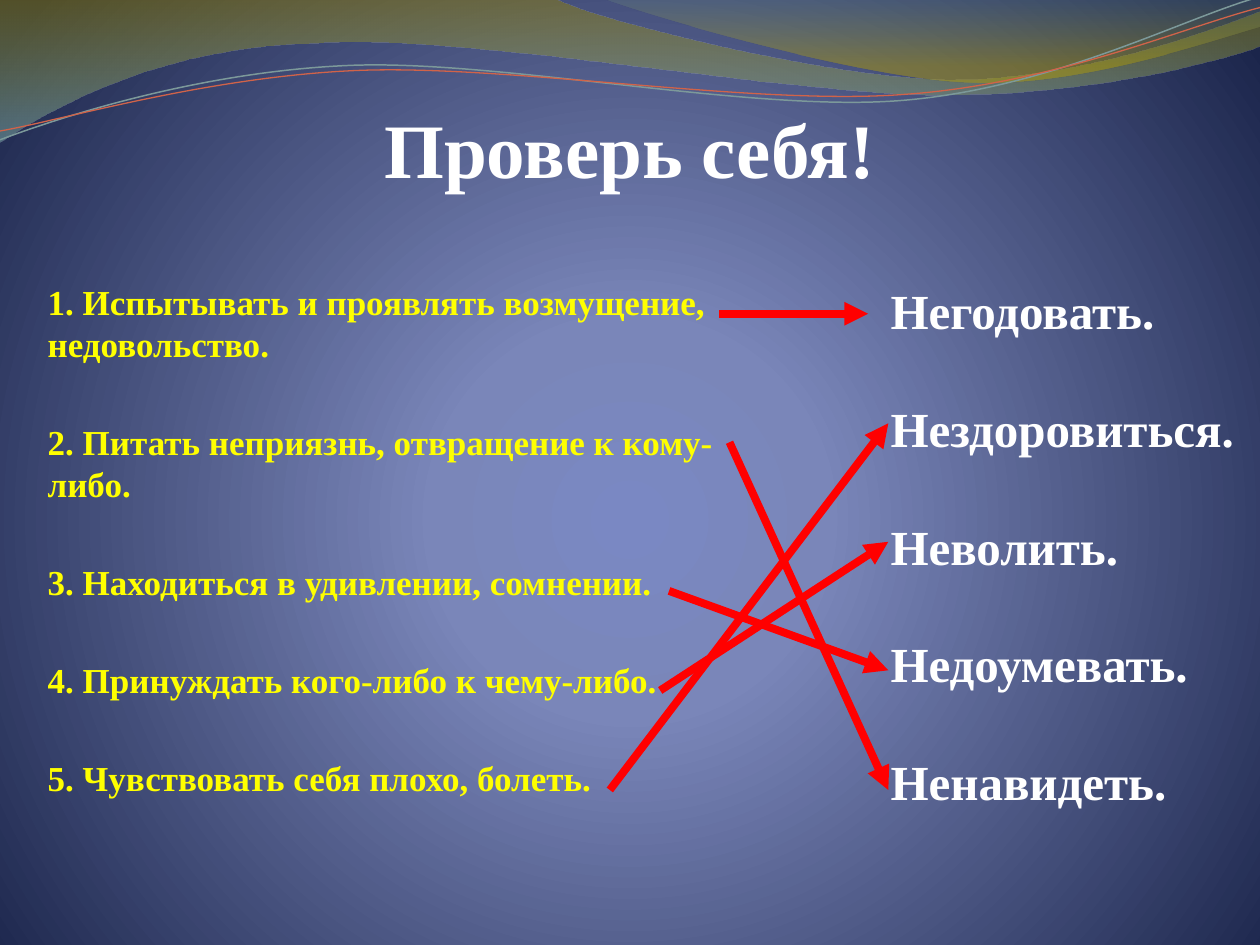
"""Build a matching-exercise answer slide with a wave-decorated background."""
from typing import NamedTuple, Optional

from lxml import etree
from pptx import Presentation
from pptx.dml.color import RGBColor
from pptx.enum.shapes import MSO_CONNECTOR
from pptx.enum.text import MSO_ANCHOR, MSO_AUTO_SIZE, PP_ALIGN
from pptx.oxml import parse_xml
from pptx.oxml.ns import qn
from pptx.util import Pt

PX = 9144
FONT = "Times New Roman"
WHITE, YELLOW, RED = "FFFFFF", "FFFF00", "FF0000"
STRAIGHT = MSO_CONNECTOR.STRAIGHT
TOP, BOTTOM = MSO_ANCHOR.TOP, MSO_ANCHOR.BOTTOM
CENTER = PP_ALIGN.CENTER
NO_AUTOFIT = MSO_AUTO_SIZE.NONE
DRAWING_NS = "http://schemas.openxmlformats.org/drawingml/2006/main"
DOWNWARD = '<a:lin ang="5400000" scaled="0"/>'
RADIAL = ('<a:path path="circle"><a:fillToRect l="10000" t="110000" '
          'r="10000" b="100000"/></a:path>')


class Stop(NamedTuple):
    """A gradient stop, with position and opacity in percent."""
    position: int
    color: str
    opacity: int = 100


class Wave(NamedTuple):
    """A ribbon with a gradient, or a thin curve with a line colour."""
    start: tuple[int, int]
    segments: list[tuple[int, ...]]
    stops: Optional[list[Stop]] = None
    line_color: str = ""
    line_width: float = 0


class Column(NamedTuple):
    """A list of entries set in one text box."""
    left: int
    top: int
    width: int
    height: int
    entries: list[str]
    size: int
    color: str
    gap: float
    wraps: bool


class Arrow(NamedTuple):
    """An arrow from a definition to its verb."""
    x1: int
    y1: int
    x2: int
    y2: int


BACKDROP = [Stop(0, "7A88C3"), Stop(25, "7A86B9"), Stop(100, "1B254B")]
WAVES = [
    Wave((0, 0), [(440, -1), (476, 17, 664, 63, 758, 63), (853, 63, 958, 26, 1000, 9),
                  (1001, 36), (983, 44, 870, 76, 746, 75), (622, 75, 382, 28, 257, 34),
                  (129, 36, 46, 83, -1, 113)],
         [Stop(0, "978500", 45), Stop(100, "77A5A6", 55)]),
    Wave((479, -1), [(509, 11, 682, 62, 769, 65), (856, 69, 961, 32, 1000, 21), (1000, 0)],
         [Stop(0, "648484", 30), Stop(80, "B49F00", 45)]),
    Wave((0, 111), [(48, 93, 158, 57, 277, 52), (395, 47, 593, 89, 713, 80),
                    (833, 71, 938, 15, 998, -2)], None, "7C999A", 0.85),
    Wave((0, 104), [(47, 96, 164, 61, 283, 56), (403, 51, 597, 84, 717, 75),
                    (836, 67, 941, 21, 1000, 6)], None, "D16349", 0.75),
]
DEFINITIONS = Column(28, 218, 551, 480, [
    "1. Испытывать и проявлять возмущение, недовольство.",
    "2. Питать неприязнь, отвращение к кому-либо.",
    "3. Находиться в удивлении, сомнении.",
    "4. Принуждать кого-либо к чему-либо.",
    "5. Чувствовать себя плохо, болеть.",
], 20, YELLOW, 32, True)
VERBS = Column(697, 218, 295, 464, [
    "Негодовать.", "Нездоровиться.", "Неволить.", "Недоумевать.", "Ненавидеть.",
], 28, WHITE, 33.6, False)
ARROWS = [
    Arrow(571, 249, 689, 249), Arrow(579, 351, 705, 627), Arrow(531, 469, 705, 532),
    Arrow(524, 548, 705, 430), Arrow(484, 627, 705, 336),
]


def rgb(color: str) -> RGBColor:
    """Turn a hex string into a colour."""
    return RGBColor.from_string(color)


def gradient(stops: list[Stop], direction: str):
    """Make a gradient fill element."""
    marks = "".join(
        f'<a:gs pos="{stop.position * 1000}"><a:srgbClr val="{stop.color}">'
        f'<a:alpha val="{stop.opacity * 1000}"/></a:srgbClr></a:gs>' for stop in stops)
    return parse_xml(f'<a:gradFill xmlns:a="{DRAWING_NS}" rotWithShape="1">'
                     f'<a:gsLst>{marks}</a:gsLst>{direction}</a:gradFill>')


def replace_solid(parent, fill) -> None:
    """Swap the solid fill of an element for another fill."""
    parent.replace(parent.find(qn("a:solidFill")), fill)


def paint_background(slide) -> None:
    """Give the slide its radial backdrop."""
    slide.background.fill.solid()
    slide.background.fill.fore_color.rgb = rgb(BACKDROP[-1].color)
    properties = next(slide.element.iter(qn("p:bgPr")))
    replace_solid(properties, gradient(BACKDROP, RADIAL))


def bend(outline, segments: list[tuple[int, ...]]) -> None:
    """Turn the straight sides of an outline into Bezier curves."""
    sides = list(outline.element.iter(qn("a:lnTo")))
    for side, segment in zip(sides, segments):
        if len(segment) == 2:
            continue
        curve = etree.Element(qn("a:cubicBezTo"))
        for x, y in zip(segment[::2], segment[1::2]):
            etree.SubElement(curve, qn("a:pt"), x=str(x * PX - outline.left),
                             y=str(y * PX - outline.top))
        side.getparent().replace(side, curve)


def draw_wave(slide, wave: Wave) -> None:
    """Draw a filled ribbon or a thin curve."""
    builder = slide.shapes.build_freeform(*(value * PX for value in wave.start))
    corners = [(segment[-2] * PX, segment[-1] * PX) for segment in wave.segments]
    builder.add_line_segments(corners, close=wave.stops is not None)
    outline = builder.convert_to_shape()
    bend(outline, wave.segments)
    outline.shadow.inherit = False
    if wave.stops:
        outline.fill.solid()
        outline.fill.fore_color.rgb = rgb(wave.stops[0].color)
        replace_solid(outline.element.spPr, gradient(wave.stops, DOWNWARD))
        outline.line.fill.background()
    else:
        outline.fill.background()
        outline.line.color.rgb = rgb(wave.line_color)
        outline.line.width = Pt(wave.line_width)


def place(shape, left: int, top: int, width: int, height: int) -> None:
    """Set the position and size of a shape in px."""
    shape.left, shape.top = left * PX, top * PX
    shape.width, shape.height = width * PX, height * PX


def style(paragraph, size: int, color: str) -> None:
    """Set the bold serif font of a paragraph."""
    font = paragraph.font
    font.name, font.size, font.bold = FONT, Pt(size), True
    font.color.rgb = rgb(color)


def write_title(slide, text: str) -> None:
    """Fill the title placeholder and lift it above the waves."""
    title = slide.shapes.title
    slide.shapes.element.append(title.element)
    place(title, 50, 29, 900, 125)
    frame = title.text_frame
    frame.text = text
    frame.auto_size, frame.vertical_anchor = NO_AUTOFIT, BOTTOM
    frame.margin_left = frame.margin_right = frame.margin_bottom = 0
    frame.margin_top = 5 * PX
    frame.paragraphs[0].alignment = CENTER
    style(frame.paragraphs[0], 44, WHITE)


def write_column(slide, column: Column) -> None:
    """Write evenly spaced entries in a text box."""
    box = slide.shapes.add_textbox(0, 0, 0, 0)
    place(box, column.left, column.top, column.width, column.height)
    frame = box.text_frame
    frame.word_wrap, frame.vertical_anchor = column.wraps, TOP
    frame.text = "\n".join(column.entries)
    for index, paragraph in enumerate(frame.paragraphs):
        style(paragraph, column.size, column.color)
        paragraph.space_before = Pt(column.gap if index else 0)


def draw_arrow(slide, arrow: Arrow) -> None:
    """Draw a thick red arrow."""
    connector = slide.shapes.add_connector(STRAIGHT, *(value * PX for value in arrow))
    connector.line.color.rgb = rgb(RED)
    connector.line.width = Pt(4.5)
    properties = connector.element.spPr
    etree.SubElement(properties.find(qn("a:ln")), qn("a:tailEnd"), type="triangle")
    etree.SubElement(properties, qn("a:effectLst"))


def main() -> None:
    """Build and save the slide."""
    deck = Presentation()
    deck.slide_width, deck.slide_height = 1000 * PX, 750 * PX
    slide = deck.slides.add_slide(deck.slide_layouts[5])
    paint_background(slide)
    for wave in WAVES:
        draw_wave(slide, wave)
    write_title(slide, "Проверь себя!")
    for column in (DEFINITIONS, VERBS):
        write_column(slide, column)
    for arrow in ARROWS:
        draw_arrow(slide, arrow)
    deck.save("out.pptx")


if __name__ == "__main__":
    main()
